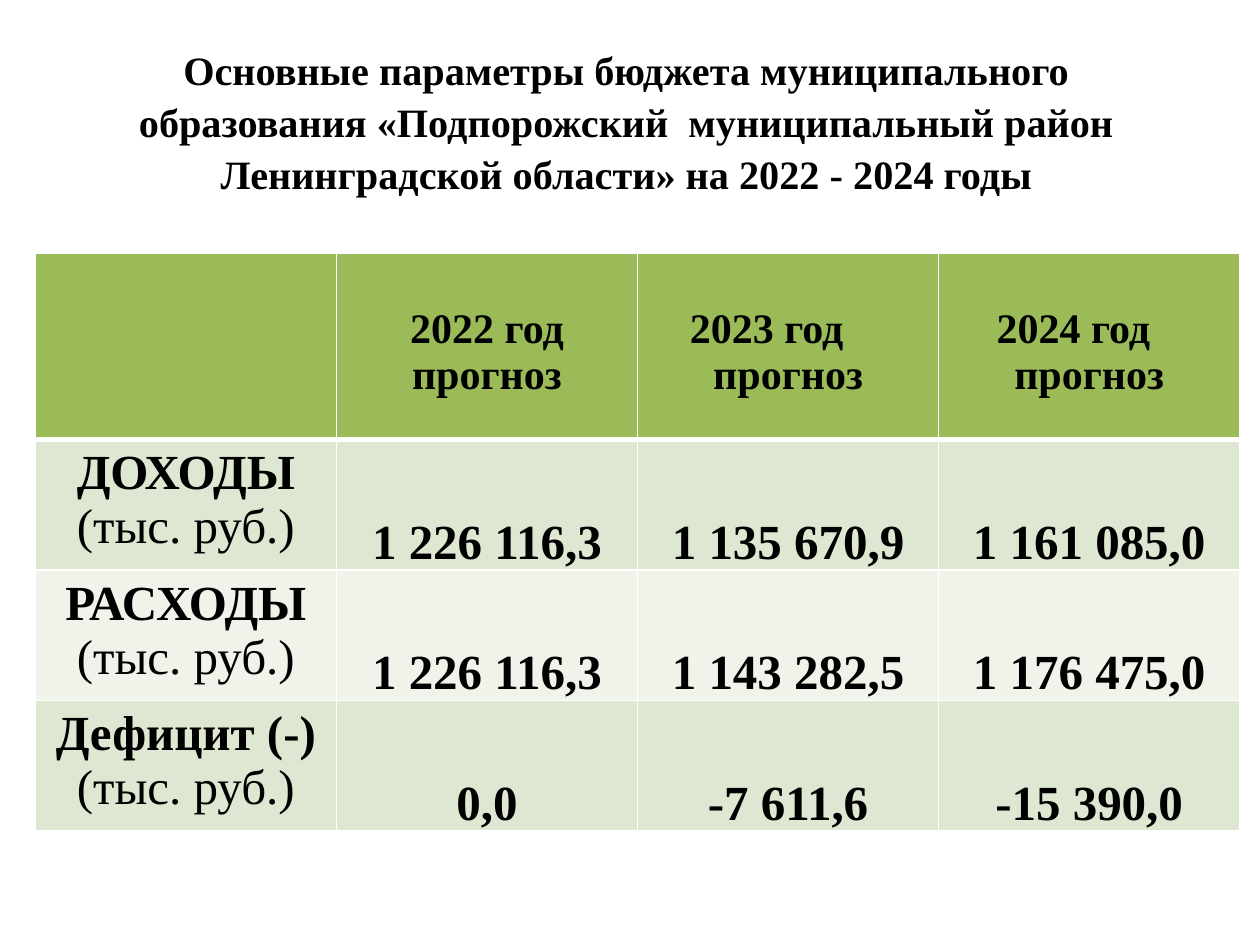
from lxml import etree
from pptx import Presentation
from pptx.dml.color import RGBColor
from pptx.enum.text import MSO_ANCHOR, PP_ALIGN
from pptx.oxml.ns import qn
from pptx.util import Inches, Pt

CENTER = PP_ALIGN.CENTER
TOP, MIDDLE, BOTTOM = MSO_ANCHOR.TOP, MSO_ANCHOR.MIDDLE, MSO_ANCHOR.BOTTOM
FONT = "Times New Roman"
BLACK, WHITE = "000000", "FFFFFF"
HEADER_FILL, BAND_FILLS = "9BBB59", ("DEE7D1", "EFF3EA")
BLANK_LAYOUT = 6

TITLE = ("Основные параметры бюджета муниципального образования "
         "«Подпорожский  муниципальный район Ленинградской области» "
         "на 2022 - 2024 годы")
# Heading and the hanging indent of its first line, in inches
HEADINGS = [("2022 год прогноз", 0), ("2023 год прогноз", 0.34),
            ("2024 год прогноз", 0.25)]
UNIT = "(тыс. руб.)"
ROWS = [
    ("ДОХОДЫ", "1 226 116,3", "1 135 670,9", "1 161 085,0"),
    ("РАСХОДЫ", "1 226 116,3", "1 143 282,5", "1 176 475,0"),
    ("Дефицит (-)", "0,0", "-7 611,6", "-15 390,0"),
]


def color(value):
    return RGBColor.from_string(value)


def write(para, text, size=28, bold=True):
    para.alignment = CENTER
    span = para.add_run()
    span.text = text
    span.font.name = FONT
    span.font.size = Pt(size)
    span.font.bold = bold
    span.font.color.rgb = color(BLACK)


def set_margins(cell, left, top, right, bottom):
    cell.margin_left, cell.margin_top = Inches(left), Inches(top)
    cell.margin_right, cell.margin_bottom = Inches(right), Inches(bottom)


def style_cell(cell, fill, top=1, bottom=1):
    """Give a cell white borders, with widths in points, and then its fill."""
    properties = cell._tc.get_or_add_tcPr()
    for side, width in (("L", 1), ("R", 1), ("T", top), ("B", bottom)):
        line = etree.SubElement(properties, qn(f"a:ln{side}"), w=str(Pt(width)))
        solid = etree.SubElement(line, qn("a:solidFill"))
        etree.SubElement(solid, qn("a:srgbClr"), val=WHITE)
    cell.fill.solid()
    cell.fill.fore_color.rgb = color(fill)


def add_title(page, left, top, width, height):
    box = page.shapes.add_textbox(left, top, width, height)
    frame = box.text_frame
    frame.word_wrap = True
    frame.vertical_anchor = MIDDLE
    para = frame.paragraphs[0]
    para.line_spacing = 1.08
    write(para, TITLE, size=23)


def fill_header(cells):
    for cell in cells:
        style_cell(cell, HEADER_FILL, bottom=3)
    for cell, (heading, indent) in zip(cells[1:], HEADINGS):
        cell.vertical_anchor = TOP
        set_margins(cell, 0.1, 0.42, 0.1 + indent, 0.05)
        para = cell.text_frame.paragraphs[0]
        properties = para._p.get_or_add_pPr()
        properties.set("marL", str(Inches(indent)))
        properties.set("indent", str(-Inches(indent)))
        write(para, heading, size=24)


def fill_row(cells, values, fill, top):
    for cell in cells:
        style_cell(cell, fill, top=top)
    label = cells[0].text_frame
    write(label.paragraphs[0], values[0])
    write(label.add_paragraph(), UNIT, bold=False)
    for cell, value in zip(cells[1:], values[1:]):
        cell.vertical_anchor = BOTTOM
        set_margins(cell, 0.01, 0.01, 0.01, 0)
        write(cell.text_frame.paragraphs[0], value)


def add_budget_table(page, left, top, width, header_height, row_height):
    column_count = len(ROWS[0])
    height = header_height + row_height * len(ROWS)
    table = page.shapes.add_table(len(ROWS) + 1, column_count,
                                  left, top, width, height).table
    for column in table.columns:
        column.width = width // column_count
    for index, row in enumerate(table.rows):
        row.height = row_height if index else header_height
        cells = list(row.cells)
        if index == 0:
            fill_header(cells)
        else:
            fill_row(cells, ROWS[index - 1], BAND_FILLS[(index - 1) % 2],
                     top=3 if index == 1 else 1)


def main():
    deck = Presentation()
    deck.slide_width, deck.slide_height = Inches(10), Inches(7.5)
    page = deck.slides.add_slide(deck.slide_layouts[BLANK_LAYOUT])
    add_title(page, Inches(0.83), Inches(0.36), Inches(8.29), Inches(1.18))
    add_budget_table(page, Inches(0.28), Inches(2.01), Inches(9.56),
                     Inches(1.48), Inches(1))
    deck.save("out.pptx")


if __name__ == "__main__":
    main()
